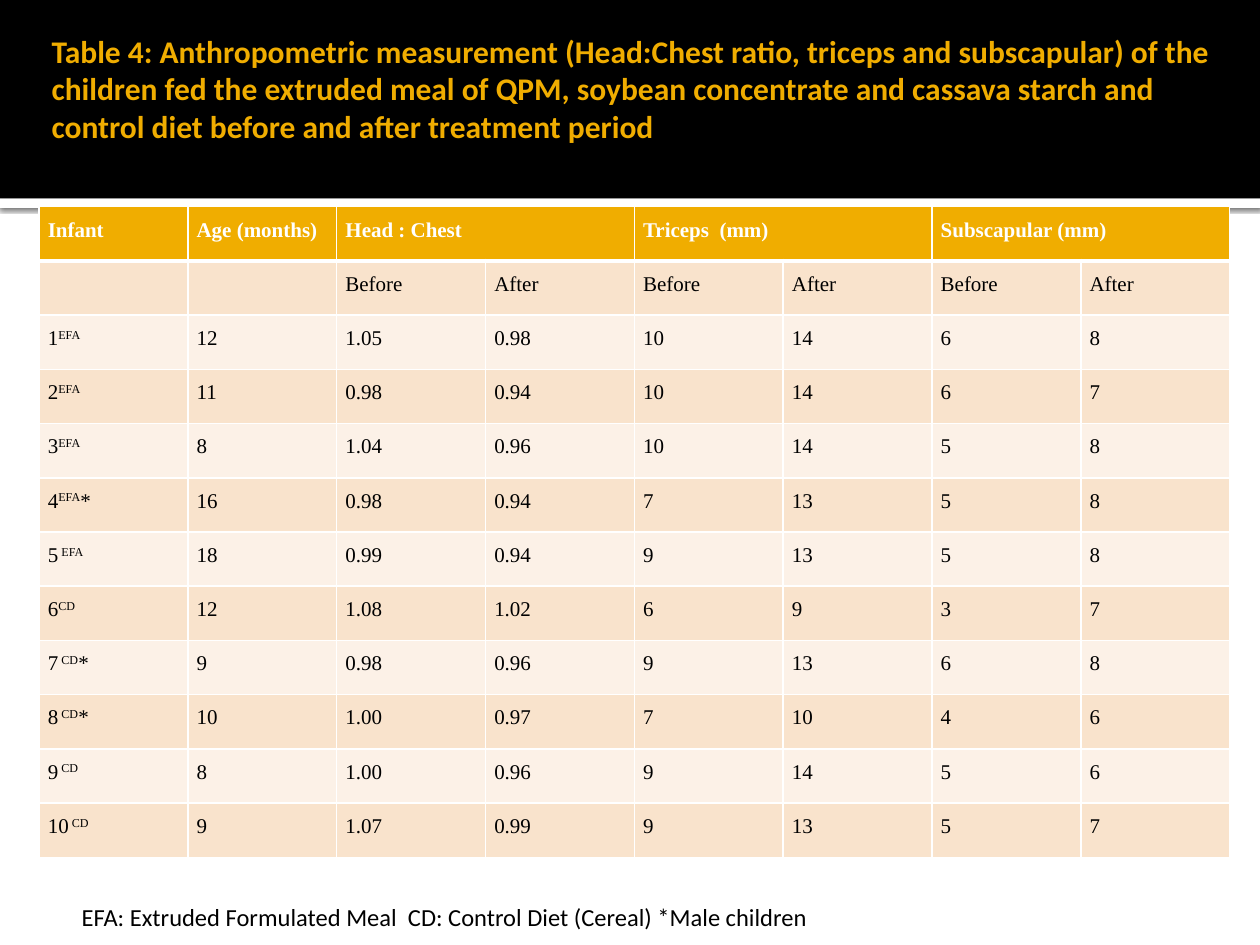
"""Build a slide with a table of anthropometric measurements of ten infants."""
import pptx
import pptx.dml.color
import pptx.enum.shapes
import pptx.enum.text
import pptx.oxml
import pptx.oxml.ns
import pptx.util

COLORS = {
    "black": "000000",
    "white": "FFFFFF",
    "gold": "F0AD00",
    "dark_band": "F9E3CC",
    "light_band": "FCF1E7",
}
HEADINGS = {0: "Infant", 1: "Age (months)", 2: "Head : Chest",
            4: "Triceps  (mm)", 6: "Subscapular (mm)"}
INFANTS = [
    (("1", "EFA", ""), "12", "1.05", "0.98", "10", "14", "6", "8"),
    (("2", "EFA", ""), "11", "0.98", "0.94", "10", "14", "6", "7"),
    (("3", "EFA", ""), "8", "1.04", "0.96", "10", "14", "5", "8"),
    (("4", "EFA", "*"), "16", "0.98", "0.94", "7", "13", "5", "8"),
    (("5", " EFA", ""), "18", "0.99", "0.94", "9", "13", "5", "8"),
    (("6", "CD", ""), "12", "1.08", "1.02", "6", "9", "3", "7"),
    (("7", " CD", "*"), "9", "0.98", "0.96", "9", "13", "6", "8"),
    (("8", " CD", "*"), "10", "1.00", "0.97", "7", "10", "4", "6"),
    (("9", " CD", ""), "8", "1.00", "0.96", "9", "14", "5", "6"),
    (("10", " CD", ""), "9", "1.07", "0.99", "9", "13", "5", "7"),
]
ROWS = [
    [HEADINGS.get(column, "") for column in range(8)],
    ["", ""] + ["Before", "After"] * 3,
    *INFANTS,
]


def set_font(paragraph, name, size, color, bold=False):
    font = paragraph.font
    font.name, font.size, font.bold = name, pptx.util.Pt(size), bold
    font.color.rgb = pptx.dml.color.RGBColor.from_string(COLORS[color])


def fill_solid(part, color):
    part.fill.solid()
    part.fill.fore_color.rgb = pptx.dml.color.RGBColor.from_string(COLORS[color])


deck = pptx.Presentation()
deck.slide_width = pptx.util.Inches(10)
deck.slide_height = pptx.util.Inches(7.5)
width, height = deck.slide_width, deck.slide_height
slide = deck.slides.add_slide(deck.slide_layouts[5])
left, content_width = int(width * 0.031), int(width * 0.945)
header_height = int(height * 0.21)
namespace = pptx.oxml.ns.nsdecls("a")

for color, top, depth in (("white", header_height, int(height * 0.01)),
                          ("black", 0, header_height)):
    band = slide.shapes.add_shape(
        pptx.enum.shapes.MSO_SHAPE.RECTANGLE, 0, top, width, depth)
    band.shadow.inherit = False
    fill_solid(band, color)
    band.line.fill.background()
    if color == "white":
        effects = band.element.spPr.find(pptx.oxml.ns.qn("a:effectLst"))
        effects.append(pptx.oxml.parse_xml(
            f'<a:outerShdw {namespace} blurRad="31750" dist="10160" dir="5400000">'
            f'<a:srgbClr val="{COLORS["black"]}"><a:alpha val="60000"/></a:srgbClr>'
            '</a:outerShdw>'))

title = slide.shapes.title
slide.shapes.element.append(title.element)
title.left, title.top = left, int(height * 0.02)
title.width, title.height = content_width, int(height * 0.18)
heading = title.text_frame
heading.text = (
    "Table 4: Anthropometric measurement (Head:Chest ratio, triceps and subscapular) "
    "of the children fed the extruded meal of QPM, soybean concentrate and cassava "
    "starch and control diet before and after treatment period")
heading.word_wrap = True
heading.auto_size = pptx.enum.text.MSO_AUTO_SIZE.NONE
heading.vertical_anchor = pptx.enum.text.MSO_ANCHOR.MIDDLE
heading.margin_left = pptx.util.Inches(0.1)
heading.margin_top = heading.margin_right = pptx.util.Inches(0.05)
heading.margin_bottom = pptx.util.Inches(0.3)
heading.paragraphs[0].alignment = pptx.enum.text.PP_ALIGN.LEFT
set_font(heading.paragraphs[0], "Calibri", 18, "gold", bold=True)

measurements = slide.shapes.add_table(
    len(ROWS), len(ROWS[0]), left, int(height * 0.2187),
    content_width, int(height * 0.689)).table
measurements.horz_banding = False
for row, values in enumerate(ROWS):
    is_header = row == 0
    for column, value in enumerate(values):
        cell = measurements.cell(row, column)
        if is_header and column in (2, 4, 6):
            cell.merge(measurements.cell(row, column + 1))
        cell.margin_left = cell.margin_right = pptx.util.Inches(0.07)
        cell.margin_top = cell.margin_bottom = 0
        borders = cell._tc.get_or_add_tcPr()
        for side in "LRTB":
            is_thick = (is_header and side == "B") or (row == 1 and side == "T")
            weight = pptx.util.Pt(3 if is_thick else 1)
            borders.append(pptx.oxml.parse_xml(
                f'<a:ln{side} {namespace} w="{weight}"><a:solidFill>'
                f'<a:srgbClr val="{COLORS["white"]}"/></a:solidFill></a:ln{side}>'))
        fill_solid(cell, "gold" if is_header
                   else "dark_band" if row % 2 else "light_band")
        paragraph = cell.text_frame.paragraphs[0]
        paragraph.alignment = pptx.enum.text.PP_ALIGN.JUSTIFY
        paragraph.line_spacing = 1.5
        paragraph.space_after = pptx.util.Pt(10)
        set_font(paragraph, "Times New Roman", 12,
                 "white" if is_header else "black", bold=is_header)
        pieces = value if isinstance(value, tuple) else (value,)
        for position, piece in enumerate(pieces):
            if piece:
                run = paragraph.add_run()
                run.text = piece
                if position == 1:
                    run._r.get_or_add_rPr().set("baseline", "30000")

legend = slide.shapes.add_textbox(
    int(width * 0.055), int(height * 0.948),
    int(width * 0.906), int(height * 0.085)).text_frame
legend.word_wrap = True
legend.text = "EFA: Extruded Formulated Meal  CD: Control Diet (Cereal) *Male children"
set_font(legend.paragraphs[0], "Calibri", 14, "black")

deck.save("out.pptx")
